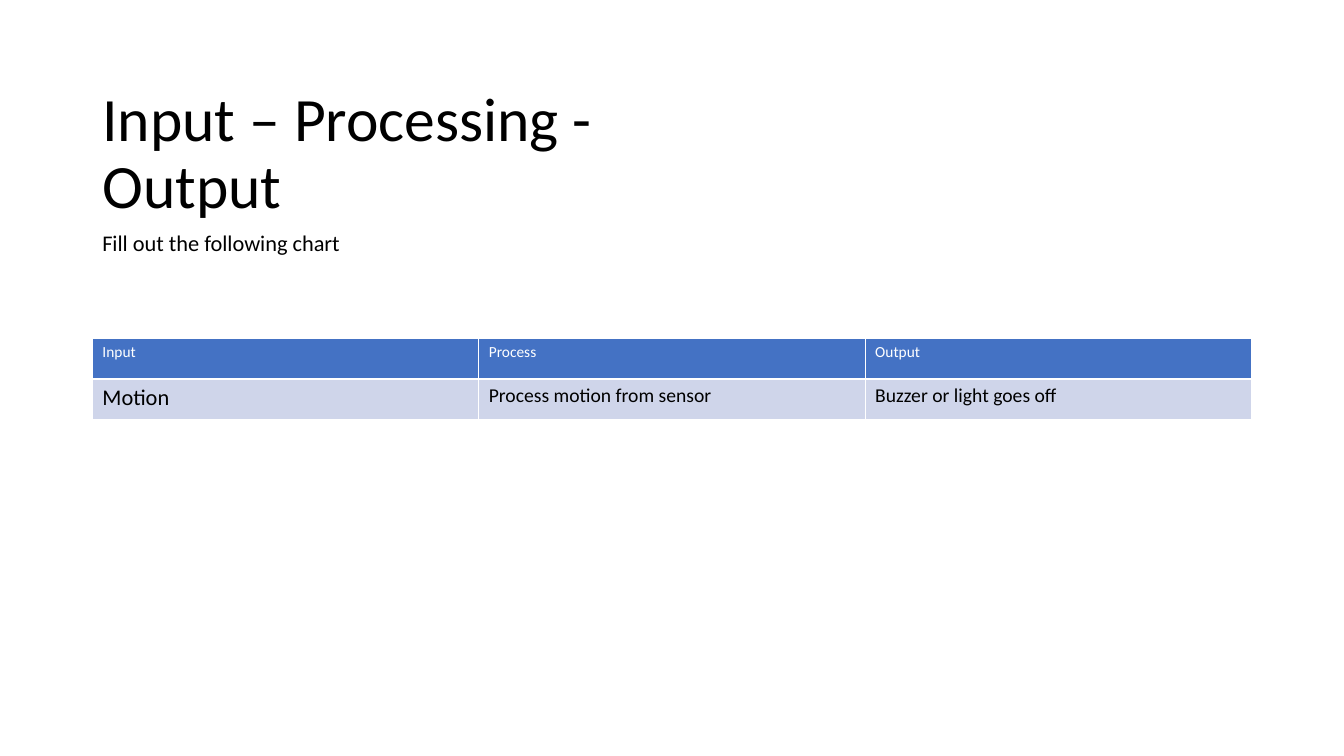
from lxml import etree
from pptx import Presentation
from pptx.dml.color import RGBColor
from pptx.enum.text import MSO_ANCHOR, MSO_AUTO_SIZE, PP_ALIGN
from pptx.oxml.ns import qn
from pptx.util import Pt

PX = 9525  # EMU in one px, 96 px to the inch
TITLE_ONLY = 5
TOP, BOTTOM = MSO_ANCHOR.TOP, MSO_ANCHOR.BOTTOM
NO_FIT = MSO_AUTO_SIZE.NONE
LEFT = PP_ALIGN.LEFT

FONT = "Calibri"
BLACK, WHITE = "000000", "FFFFFF"
HEADER_BLUE, ROW_BLUE = "4472C4", "CFD5EA"


def colour(value):
    return RGBColor.from_string(value)


class SlideBuilder:
    def __init__(self, deck):
        self.slide = deck.slides.add_slide(deck.slide_layouts[TITLE_ONLY])
        background = self.slide.background.fill
        background.solid()
        background.fore_color.rgb = colour(WHITE)

    def add_span(self, frame, text, size, text_colour=BLACK):
        para = frame.paragraphs[0]
        para.alignment = LEFT
        span = para.add_run()
        span.text = text
        span.font.name = FONT
        span.font.size = Pt(size)
        span.font.bold = False
        span.font.color.rgb = colour(text_colour)
        return para

    def fill_box(self, box, text, size, anchor):
        frame = box.text_frame
        frame.word_wrap = True
        frame.auto_size = NO_FIT
        frame.vertical_anchor = anchor
        self.add_span(frame, text, size).line_spacing = 0.9

    def title(self, left, top, width, height, text, size):
        box = self.slide.shapes.title
        box.left, box.top = left * PX, top * PX
        box.width, box.height = width * PX, height * PX
        self.fill_box(box, text, size, BOTTOM)

    def text(self, left, top, width, height, text, size):
        box = self.slide.shapes.add_textbox(
            left * PX, top * PX, width * PX, height * PX)
        self.fill_box(box, text, size, TOP)

    def borders(self, cell, line_colour, points):
        properties = cell._tc.get_or_add_tcPr()
        for side in ("a:lnL", "a:lnR", "a:lnT", "a:lnB"):
            line = etree.SubElement(properties, qn(side), w=str(Pt(points)))
            solid = etree.SubElement(line, qn("a:solidFill"))
            etree.SubElement(solid, qn("a:srgbClr"), val=line_colour)

    def cell(self, cell, text, size, text_colour, fill):
        self.borders(cell, WHITE, 1)
        cell.fill.solid()
        cell.fill.fore_color.rgb = colour(fill)
        return self.add_span(cell.text_frame, text, size, text_colour)

    def table(self, left, top, column_width, row_height, header, entries):
        count = len(header)
        table = self.slide.shapes.add_table(
            2, count, left * PX, top * PX,
            count * column_width * PX, 2 * row_height * PX).table
        for column, heading in enumerate(header):
            para = self.cell(table.cell(0, column), heading, 11, WHITE, HEADER_BLUE)
            para.space_after = Pt(12)
        for column, (entry, size) in enumerate(entries):
            self.cell(table.cell(1, column), entry, size, BLACK, ROW_BLUE)


def main():
    deck = Presentation()
    deck.slide_width, deck.slide_height = 1280 * PX, 720 * PX
    page = SlideBuilder(deck)

    # Heading and instruction
    page.title(88, 48, 628, 168, "Input – Processing - Output", 44)
    page.text(88, 216, 1057, 400, "Fill out the following chart", 16)

    # Input, process and output chart
    page.table(
        88, 322, 368, 39,
        ["Input", "Process", "Output"],
        [("Motion", 16), ("Process motion from sensor", 14),
         ("Buzzer or light goes off", 14)])

    deck.save("out.pptx")


if __name__ == "__main__":
    main()
